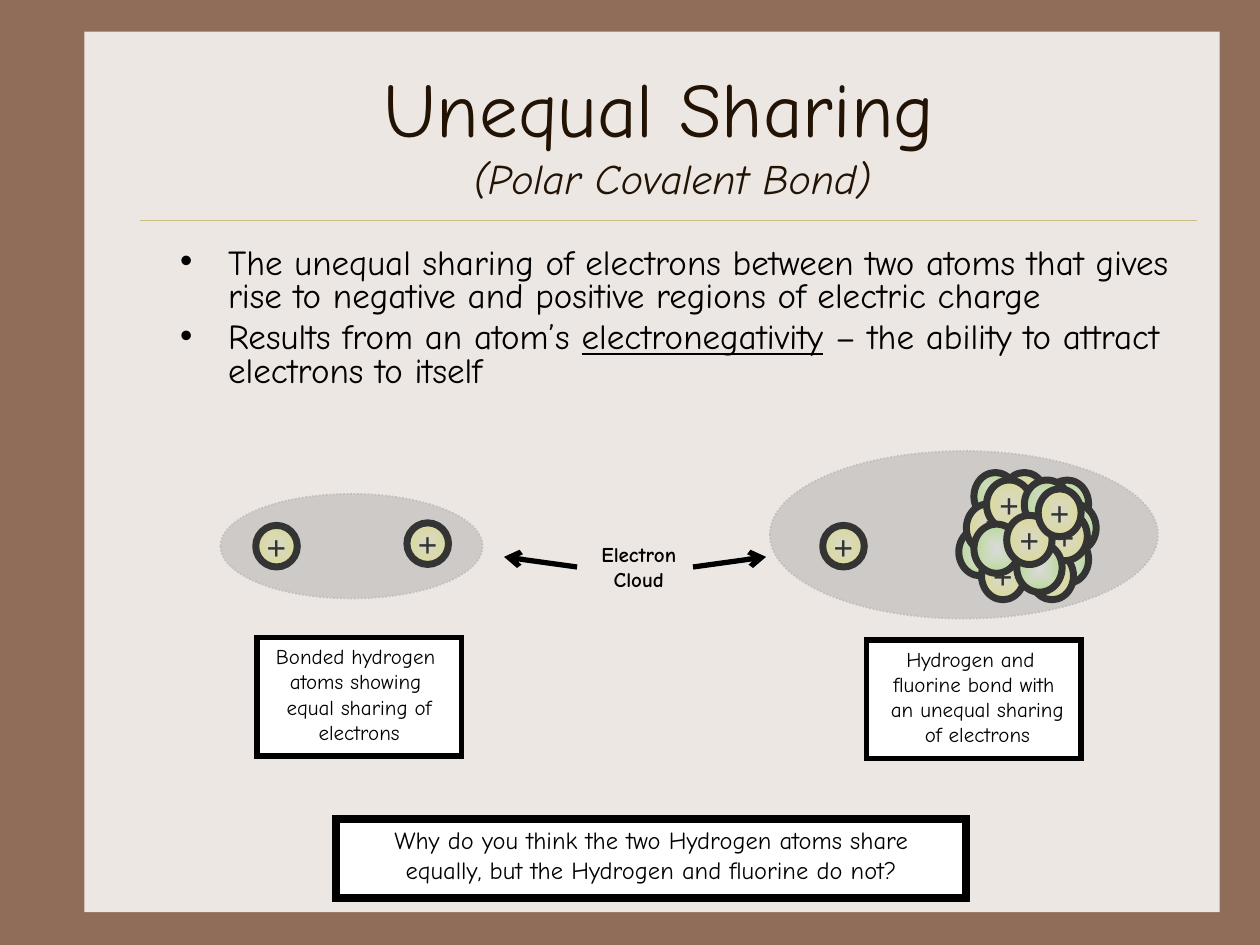
import pptx
import pptx.util
import pptx.dml.color
import pptx.enum.dml
import pptx.enum.shapes
import pptx.enum.text
import pptx.oxml
import pptx.oxml.ns
from lxml import etree

Inches = pptx.util.Inches
Pt = pptx.util.Pt
SHAPE = pptx.enum.shapes.MSO_SHAPE
ALIGN = pptx.enum.text.PP_ALIGN
ANCHOR = pptx.enum.text.MSO_ANCHOR
FIT = pptx.enum.text.MSO_AUTO_SIZE
qn = pptx.oxml.ns.qn

HAND_FONT = "Comic Neue"
PROTON = ("FEFDE3", "FFFF99")
NEUTRON = ("FFFFFF", "CCFF99")

# Fluorine nucleus from back to front: kind, left, top, width, height in the box
SMALL, LARGE = (0.34, 0.38), (0.36, 0.39)
NUCLEUS = [
    (NEUTRON, 0.69, 0.06, *SMALL), (NEUTRON, 0, 0.44, *SMALL),
    (NEUTRON, 0.75, 0.25, *SMALL), (NEUTRON, 0.69, 0.5, *SMALL),
    (NEUTRON, 0.12, 0, *SMALL), (PROTON, 0.57, 0.63, *SMALL),
    (PROTON, 0.35, 0, *SMALL), (PROTON, 0.06, 0.25, *SMALL),
    (PROTON, 0.18, 0.63, *SMALL), (PROTON, 0.22, 0.06, *LARGE),
    (NEUTRON, 0.52, 0.06, *LARGE), (PROTON, 0.66, 0.31, *LARGE),
    (NEUTRON, 0.12, 0.41, *LARGE), (NEUTRON, 0.46, 0.56, *LARGE),
    (PROTON, 0.38, 0.34, *LARGE), (PROTON, 0.63, 0.13, *SMALL),
]


def colour(value):
    return pptx.dml.color.RGBColor.from_string(value)


def place(item, box):
    """Put a placeholder in its box, in front of the parts already drawn."""
    for name, value in zip(("left", "top", "width", "height"), box):
        setattr(item, name, Inches(value))
    item._element.getparent().append(item._element)


def set_format(target, values):
    for name, value in values.items():
        setattr(target, name, value)


def set_font(span, size, ink="000000", **extra):
    set_format(span.font, {"name": HAND_FONT, "size": Pt(size), **extra})
    span.font.color.rgb = colour(ink)


def add_panel(shapes, kind, box, fill, line=None, width=0):
    panel = shapes.add_shape(kind, *map(Inches, box))
    panel.shadow.inherit = False
    panel.fill.solid()
    panel.fill.fore_color.rgb = colour(fill)
    if line:
        panel.line.color.rgb = colour(line)
        panel.line.width = Pt(width)
    else:
        panel.line.fill.background()
    return panel


def add_line(page, start, end, ink, width, arrow=False):
    line = page.shapes.add_connector(
        pptx.enum.shapes.MSO_CONNECTOR.STRAIGHT, *map(Inches, start + end))
    line.line.color.rgb = colour(ink)
    line.line.width = Pt(width)
    properties = line._element.spPr
    if arrow:
        etree.SubElement(properties.find(qn("a:ln")), qn("a:tailEnd"), type="arrow")
    etree.SubElement(properties, qn("a:effectLst"))


def write_lines(item, lines, size, wrap=False, **extra):
    frame = item.text_frame
    set_format(frame, {"word_wrap": wrap, "auto_size": FIT.SHAPE_TO_FIT_TEXT,
                       "vertical_anchor": ANCHOR.TOP})
    for index, text in enumerate(lines):
        para = frame.add_paragraph() if index else frame.paragraphs[0]
        para.alignment = ALIGN.CENTER
        span = para.add_run()
        span.text = text
        set_font(span, size, **extra)


def add_backdrop(page):
    page.background.fill.solid()
    page.background.fill.fore_color.rgb = colour("906D58")
    add_panel(page.shapes, SHAPE.RECTANGLE, (0.67, 0.25, 9.01, 6.99), "EDE7E3")
    add_line(page, (1.11, 1.75), (9.5, 1.75), "CBBD83", 0.25)


def add_title(page, box):
    title = page.shapes.title
    place(title, box)
    set_format(title.text_frame, {"word_wrap": True, "auto_size": FIT.NONE,
                                  "vertical_anchor": ANCHOR.MIDDLE})
    para = title.text_frame.paragraphs[0]
    para.alignment = ALIGN.CENTER
    heading = para.add_run()
    heading.text = "Unequal Sharing "
    set_font(heading, 44, "221304")
    para.add_line_break()
    subtitle = para.add_run()
    subtitle.text = "(Polar Covalent Bond)"
    set_font(subtitle, 24, "221304", italic=True)


def add_bullets(page, box):
    body = page.placeholders[1]
    place(body, box)
    frame = body.text_frame
    set_format(frame, {"word_wrap": True, "auto_size": FIT.NONE})
    points = [
        ["The unequal sharing of electrons between two atoms that gives rise "
         "to negative and positive regions of electric charge"],
        ["Results from an atom’s ", "electronegativity",
         " – the ability to attract electrons to itself"],
    ]
    for index, parts in enumerate(points):
        para = frame.add_paragraph() if index else frame.paragraphs[0]
        properties = para._p.get_or_add_pPr()
        properties.set("marL", str(Inches(0.38)))
        properties.set("indent", str(-Inches(0.38)))
        etree.SubElement(properties, qn("a:buChar"), char="•")
        set_format(para, {"line_spacing": 0.8, "space_before": Pt(4 * index)})
        for text in parts:
            span = para.add_run()
            span.text = text
            set_font(span, 20, underline=text == "electronegativity")


def add_particle(shapes, kind, box):
    ball = add_panel(shapes, SHAPE.OVAL, box, kind[0], "000000", 4)
    # Radial gradient from the centre outwards
    ball.fill.gradient()
    for stop, value in zip(ball.fill.gradient_stops, kind):
        stop.color.rgb = colour(value)
    gradient = ball._element.spPr.find(qn("a:gradFill"))
    gradient.remove(gradient.find(qn("a:lin")))
    radial = etree.SubElement(gradient, qn("a:path"), path="shape")
    etree.SubElement(radial, qn("a:fillToRect"),
                     {side: "50000" for side in "ltrb"})
    if kind is PROTON:
        write_lines(ball, ["+"], 20, name="Times New Roman", bold=True)
        set_format(ball.text_frame, {"auto_size": FIT.NONE,
                                     "vertical_anchor": ANCHOR.MIDDLE})


def add_nucleus(page, left, top):
    group = page.shapes.add_group_shape()
    for kind, across, down, width, height in NUCLEUS:
        add_particle(group.shapes, kind, (left + across, top + down, width, height))


def add_cloud(page, box):
    cloud = add_panel(page.shapes, SHAPE.OVAL, box, "969696", "C0C0C0", 1)
    cloud.line.dash_style = pptx.enum.dml.MSO_LINE.ROUND_DOT
    fill = cloud._element.spPr.find(qn("a:solidFill"))
    etree.SubElement(fill[0], qn("a:alpha"), val="35000")


def add_molecule(page, box, hydrogens):
    left, top = box[:2]
    for across, down in hydrogens:
        add_particle(page.shapes, PROTON, (left + across, top + down, 0.33, 0.33))
    add_cloud(page, box)


def add_note(page, box, lines, size, border, wrap=False):
    note = add_panel(page.shapes, SHAPE.RECTANGLE, box, "FFFFFF", "000000", border)
    # Square corners on the border
    etree.SubElement(note._element.spPr.find(qn("a:ln")), qn("a:miter"), lim="800000")
    write_lines(note, lines, size, wrap)


def add_cloud_label(page, box):
    label = page.shapes.add_textbox(*map(Inches, box))
    write_lines(label, ["Electron", "Cloud"], 12, bold=True)
    # Arrows to both clouds
    add_line(page, (5.5, 4.5), (6.08, 4.42), "000000", 3, arrow=True)
    add_line(page, (4.58, 4.5), (4, 4.42), "000000", 3, arrow=True)


def main():
    deck = pptx.Presentation()
    deck.slide_width, deck.slide_height = Inches(10), Inches(7.5)
    page = deck.slides.add_slide(deck.slide_layouts[1])
    add_backdrop(page)
    add_title(page, (1.17, 0.42, 8.33, 1.25))
    add_bullets(page, (1.33, 1.92, 8.08, 1.58))
    # Molecules and their electron clouds
    add_nucleus(page, 7.61, 3.75)
    add_molecule(page, (1.75, 3.92, 2.08, 0.83), [(0.28, 0.25), (1.48, 0.23)])
    add_molecule(page, (6.11, 3.58, 3.08, 1.33), [(0.42, 0.59)])
    add_cloud_label(page, (4.64, 4.25, 0.86, 0.5))
    # Captions and question
    add_note(page, (2.04, 5.06, 1.62, 0.94),
             ["Bonded hydrogen ", "atoms showing ", "equal sharing of", "electrons"],
             12, 3)
    add_note(page, (6.88, 5.08, 1.7, 0.94),
             ["Hydrogen and ", "fluorine bond with", " an unequal sharing",
              " of electrons"], 12, 3)
    add_note(page, (2.67, 6.5, 5, 0.63),
             ["Why do you think the two Hydrogen atoms share",
              "equally, but the Hydrogen and fluorine do not?"], 14, 4.5, True)
    deck.save("out.pptx")


if __name__ == "__main__":
    main()
